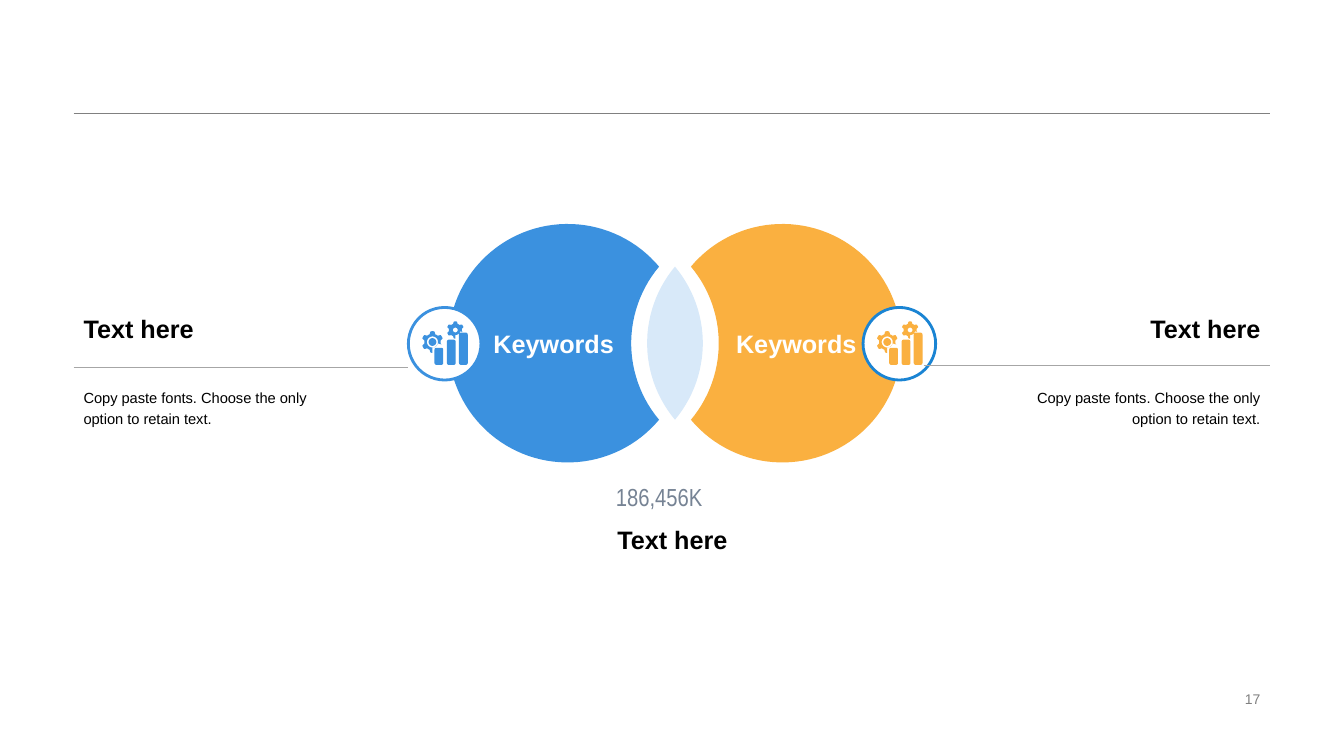
from math import acos, cos, degrees, radians, sin

from lxml.etree import SubElement
from pptx import Presentation
from pptx.dml.color import RGBColor
from pptx.enum.shapes import MSO_CONNECTOR as Connector, MSO_SHAPE as Shape
from pptx.enum.text import MSO_ANCHOR as Anchor, PP_ALIGN as Align
from pptx.oxml.ns import qn
from pptx.util import Inches, Pt

COLORS = {
    "white": "FFFFFF", "black": "000000", "blue": "3B91DF", "orange": "FAB040",
    "pale": "D8E9F9", "ring": "1A84D3", "gray": "808080", "rule": "A6A6A6",
    "slate": "768394",
}
CELL = Inches(0.1)  # one column or row of the grid
COLUMNS, ROWS = 133.3, 75
FINE = 1000  # drawing steps per cell


def color(name):
    return RGBColor.from_string(COLORS[name])


def write(frame, text, size=18, font="Arial", ink="black", bold=False,
          align=Align.LEFT, anchor=Anchor.TOP, spacing=None):
    frame.word_wrap = True
    frame.vertical_anchor = anchor
    para = frame.paragraphs[0]
    para.alignment = align
    if spacing:
        para.line_spacing = spacing
    span = para.add_run()
    span.text = text
    span.font.size, span.font.name, span.font.bold = Pt(size), font, bold
    span.font.color.rgb = color(ink)


def arc(x, y, radius, start=0, end=360, step=3):
    """Points along a circle, angles clockwise from the right."""
    count = max(2, round(abs(end - start) / step))
    angles = [radians(start + (end - start) * i / count) for i in range(count + 1)]
    return [(x + radius * cos(a), y + radius * sin(a)) for a in angles]


def bar(left, top, right, bottom, corner=0.2):
    """Outline of a bar with rounded corners."""
    centers = [(right - corner, bottom - corner), (left + corner, bottom - corner),
               (left + corner, top + corner), (right - corner, top + corner)]
    return [point for i, (x, y) in enumerate(centers)
            for point in arc(x, y, corner, 90 * i, 90 * i + 90, 15)]


def gear(x, y, radius, notch):
    """Six-toothed wheel whose lower right part is cut away."""
    teeth = []
    for angle in range(90, 376, 5):
        wave = max(-1, min(1, -2 * cos(radians(6 * angle))))
        reach = radius * (0.88 + 0.12 * wave)
        teeth.append((x + reach * cos(radians(angle)), y + reach * sin(radians(angle))))
    return teeth + arc(x, y, notch, 15, 90, 15)


class Sheet:
    def __init__(self, deck):
        self.shapes = deck.slides.add_slide(deck.slide_layouts[6]).shapes

    def text(self, left, top, width, height, text, **style):
        box = self.shapes.add_textbox(*(round(v * CELL) for v in (left, top, width, height)))
        write(box.text_frame, text, **style)

    def rule(self, start, end, y, ink="rule", weight=0.5):
        line = self.shapes.add_connector(
            Connector.STRAIGHT, *(round(v * CELL) for v in (start, y, end, y)))
        line.line.color.rgb = color(ink)
        line.line.width = Pt(weight)
        SubElement(line._element.spPr, qn("a:effectLst"))

    def circle(self, left, top, size, fill, ring):
        disc = self.shapes.add_shape(
            Shape.OVAL, *(round(v * CELL) for v in (left, top, size, size)))
        self.paint(disc, fill)
        disc.line.color.rgb = color(ring)
        disc.line.width = Pt(2)

    def outline(self, fill, *contours):
        builder = None
        for contour in contours:
            points = [(x * FINE, y * FINE) for x, y in contour]
            if builder is None:
                builder = self.shapes.build_freeform(*points[0], scale=CELL / FINE)
            else:
                builder.move_to(*points[0])
            builder.add_line_segments(points[1:], close=True)
        figure = builder.convert_to_shape()
        self.paint(figure, fill)
        return figure

    def paint(self, figure, fill):
        figure.shadow.inherit = False
        figure.fill.solid()
        figure.fill.fore_color.rgb = color(fill)
        figure.line.fill.background()

    def icon(self, x, y, fill):
        """Gears over a bar chart, placed by its top left corner."""
        self.outline(
            fill,
            *(bar(x + left, y + top, x + left + 0.87, y + 4.3)
              for left, top in ((1.2, 2.6), (2.43, 1.8), (3.63, 1.1))),
            gear(x + 1, y + 2.03, 1.07, 0.55), arc(x + 1, y + 2.03, 0.55, step=10),
            arc(x + 1, y + 2.03, 0.38, step=10),
            gear(x + 3.27, y + 0.84, 0.85, 0.5), arc(x + 3.27, y + 0.84, 0.24, step=15))


def main():
    deck = Presentation()
    deck.slide_width, deck.slide_height = round(COLUMNS * CELL), ROWS * CELL
    page = Sheet(deck)
    left, right = 7.3, 126

    # Page frame
    page.rule(left, right, 11.25, "gray", 0.25)
    page.text(94.2, 68.2, 31.8, 2.3, "17", size=10, ink="gray",
              align=Align.RIGHT, anchor=Anchor.MIDDLE)

    # Overlap of the two circles
    middle, axis, radius, offset = 66.95, 34.05, 11.83, 9.07
    bite = degrees(acos(offset / radius))
    page.outline("pale", arc(middle - offset, axis, radius, -bite, bite)
                 + arc(middle + offset, axis, radius, 180 - bite, 180 + bite))

    # Circles with the overlap cut out
    for x, turn, fill in ((56.3, 0, "blue"), (77.6, 180, "orange")):
        partner = x + 2 * offset * cos(radians(turn))
        disc = page.outline(
            fill, arc(x, axis, radius, turn + bite, turn + 360 - bite)
            + arc(partner, axis, radius, turn + 180 + bite, turn + 180 - bite))
        write(disc.text_frame, "Keywords", ink="white", bold=True,
              align=Align.CENTER, anchor=Anchor.MIDDLE)

    # Icon badges
    for x, fill, ring in ((40.5, "blue", "blue"), (85.6, "orange", "ring")):
        page.circle(x, 30.5, 7.2, "white", ring)
        page.icon(x + 1.4, 31.9, fill)

    # Side texts and their rules
    for x, width, align in ((left, 24.2, Align.LEFT), (98.5, 27.5, Align.RIGHT)):
        page.text(x, 30.6, width, 5.6, "Text here", bold=True, align=align)
        page.text(x, 37.7, width, 6.3,
                  "Copy paste fonts. Choose the only option to retain text.",
                  size=10.5, align=align, spacing=1.2)
    page.rule(left, 40.5, 36.4)
    page.rule(91.6, right, 36.2)

    # Figure below the circles
    page.text(60.1, 47.3, 13.1, 3.9, "186,456K", size=17.6,
              font="Arial Narrow", ink="slate")
    page.text(56.5, 51.2, 20.4, 4.6, "Text here", bold=True,
              align=Align.CENTER, anchor=Anchor.MIDDLE)

    deck.save("out.pptx")


if __name__ == "__main__":
    main()
